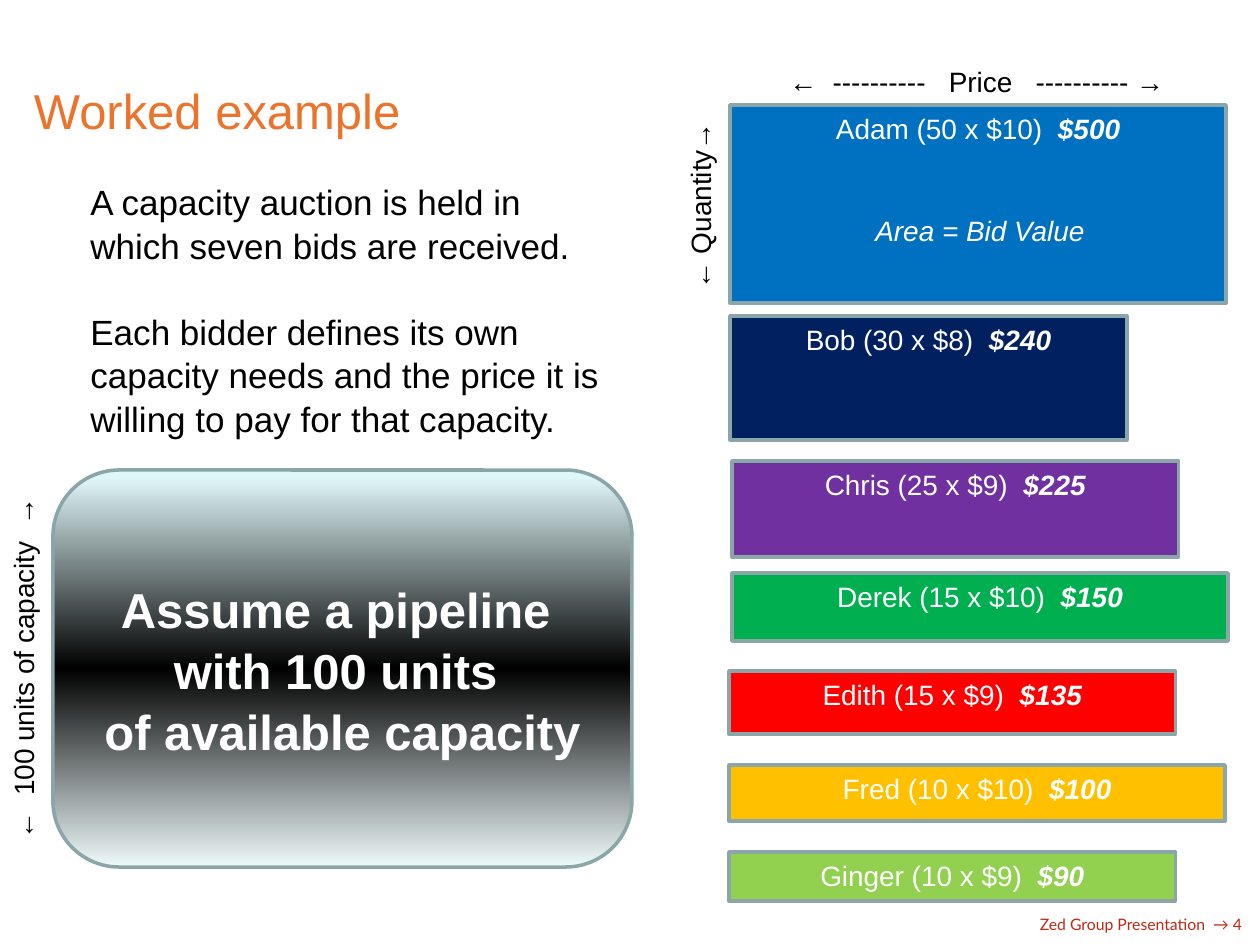
from copy import deepcopy
from dataclasses import dataclass

from pptx import Presentation
from pptx.dml.color import RGBColor
from pptx.enum.shapes import MSO_SHAPE
from pptx.enum.text import MSO_ANCHOR, PP_ALIGN
from pptx.oxml.ns import qn
from pptx.util import Emu, Pt

PX = 914400 / 126


@dataclass(frozen=True)
class Theme:
    font: str = "Arial"
    footer_font: str = "Lato"
    title: str = "EC732C"
    text: str = "000000"
    light: str = "FFFFFF"
    outline: str = "8AA6A8"
    footer: str = "BC2B16"
    panel_stops: tuple = ((0.02, "DFF6F8"), (0.5, "000000"), (1, "EFFAFB"))
    heading_size: int = 28
    body_size: int = 20
    label_size: int = 16
    footer_size: int = 9
    line_width: int = 2
    leading: float = 1.045


THEME = Theme()

# Bidder, quantity, price, left, top, height, colour
BIDS = [
    ("Adam", 50, 10, 1, 0, 198, "0070C0"),
    ("Bob", 30, 8, 1, 211, 124, "002060"),
    ("Chris", 25, 9, 3, 356, 96, "7030A0"),
    ("Derek", 15, 10, 3, 468, 68, "00B050"),
    ("Edith", 15, 9, 0, 566, 63, "FF0000"),
    ("Fred", 10, 10, 0, 660, 56, "FFC000"),
    ("Ginger", 10, 9, 0, 747, 49, "92D050"),
]
PRICE_UNIT = 49.6  # bar width for one dollar


def px(*values):
    return [Emu(round(v * PX)) for v in values]


def style(run, size, color, font=THEME.font, bold=None, italic=None):
    f = run.font
    f.name, f.size, f.bold, f.italic = font, Pt(size), bold, italic
    f.color.rgb = RGBColor.from_string(color)


def write(tf, lines, size, color, align=PP_ALIGN.CENTER, **font):
    tf.word_wrap = True
    tf.text = "\n".join(lines)
    for p in tf.paragraphs:
        p.alignment = align
        for r in p.runs:
            style(r, size, color, **font)


def add_label(slide, box, text, color=THEME.text, **font):
    sp = slide.shapes.add_textbox(*px(*box))
    write(sp.text_frame, [text], THEME.label_size, color, **font)
    return sp


def add_vertical_label(slide, box, text):
    """Text reading upwards inside the given upright box."""
    x, y, w, h = box
    frame = (x + (w - h) / 2, y + (h - w) / 2, h, w)
    add_label(slide, frame, text).rotation = 270


def add_outlined(slide, kind, box):
    sp = slide.shapes.add_shape(kind, *px(*box))
    sp.shadow.inherit = False
    sp.line.color.rgb = RGBColor.from_string(THEME.outline)
    sp.line.width = Pt(THEME.line_width)
    return sp


def add_title(slide, box):
    sp = slide.shapes.title
    sp.left, sp.top, sp.width, sp.height = px(*box)
    tf = sp.text_frame
    write(tf, ["Worked example"], THEME.heading_size, THEME.title, PP_ALIGN.LEFT)
    tf.vertical_anchor = MSO_ANCHOR.TOP
    tf.margin_left = tf.margin_right = tf.margin_bottom = 0
    tf.margin_top = px(4)[0]


def add_intro(slide, box):
    tf = slide.shapes.add_textbox(*px(*box)).text_frame
    write(tf, [
        "A capacity auction is held in which seven bids are received.",
        "Each bidder defines its own capacity needs and the price it is "
        "willing to pay for that capacity.",
    ], THEME.body_size, THEME.text, PP_ALIGN.LEFT)
    for p in tf.paragraphs:
        p.line_spacing = THEME.leading
    tf.paragraphs[1].space_before = Pt(24)


def add_pipeline(slide, box):
    x, y, w, h = box
    label_w = 50

    # Gradient panel
    sp = add_outlined(slide, MSO_SHAPE.ROUNDED_RECTANGLE,
                      (x + label_w + 3, y, w - label_w - 3, h))
    fill = sp.fill
    fill.gradient()
    fill.gradient_angle = 270
    stops = sp._element.spPr.find(qn("a:gradFill")).find(qn("a:gsLst"))
    stops.append(deepcopy(stops[0]))
    for stop, (position, color) in zip(fill.gradient_stops, THEME.panel_stops):
        stop.position = position
        stop.color.rgb = RGBColor.from_string(color)

    # Statement
    tf = sp.text_frame
    write(tf, ["Assume a pipeline ", "with 100 units ", "of available capacity"],
          THEME.heading_size, THEME.light, bold=True)
    tf.vertical_anchor = MSO_ANCHOR.MIDDLE
    for p in tf.paragraphs:
        p.line_spacing = THEME.leading

    # Capacity axis
    add_vertical_label(slide, (x, y, label_w, h), "←  100 units of capacity  →")


def add_bids(slide, box):
    x, y, w, h = box
    axis_h, first_h = 47, BIDS[0][5]

    # One bar per bid, its width following the price
    for name, qty, price, dx, dy, bar_h, color in BIDS:
        sp = add_outlined(slide, MSO_SHAPE.RECTANGLE,
                          (x + dx, y + dy, price * PRICE_UNIT, bar_h))
        sp.fill.solid()
        sp.fill.fore_color.rgb = RGBColor.from_string(color)
        tf = sp.text_frame
        tf.vertical_anchor = MSO_ANCHOR.TOP
        write(tf, [f"{name} ({qty} x ${price})  "], THEME.label_size, THEME.light)
        r = tf.paragraphs[0].add_run()
        r.text = f"${qty * price}"
        style(r, THEME.label_size, THEME.light, bold=True, italic=True)

    # Axes and area note
    add_vertical_label(slide, (x - 52, y + 2, axis_h, first_h), "← Quantity→")
    add_label(slide, (x, y - axis_h, w, axis_h),
              "←  ----------   Price   ---------- →")
    add_label(slide, (x + 3, y + 102, w, axis_h), "Area = Bid Value",
              THEME.light, italic=True)


def add_footer(slide, box):
    tf = slide.shapes.add_textbox(*px(*box)).text_frame
    write(tf, ["Zed Group Presentation  → 4"], THEME.footer_size, THEME.footer,
          PP_ALIGN.RIGHT, font=THEME.footer_font)
    tf.vertical_anchor = MSO_ANCHOR.BOTTOM
    tf.margin_left = tf.margin_top = tf.margin_right = tf.margin_bottom = 0


def main():
    prs = Presentation()
    prs.slide_width, prs.slide_height = px(1260, 945)
    slide = prs.slides.add_slide(prs.slide_layouts[5])
    add_footer(slide, (805, 885, 437, 49))
    add_title(slide, (34, 76, 1056, 79))
    add_pipeline(slide, (0, 470, 632, 397))
    add_bids(slide, (729, 105, 496, 796))
    add_intro(slide, (78, 173, 546, 267))
    prs.save("out.pptx")


if __name__ == "__main__":
    main()
